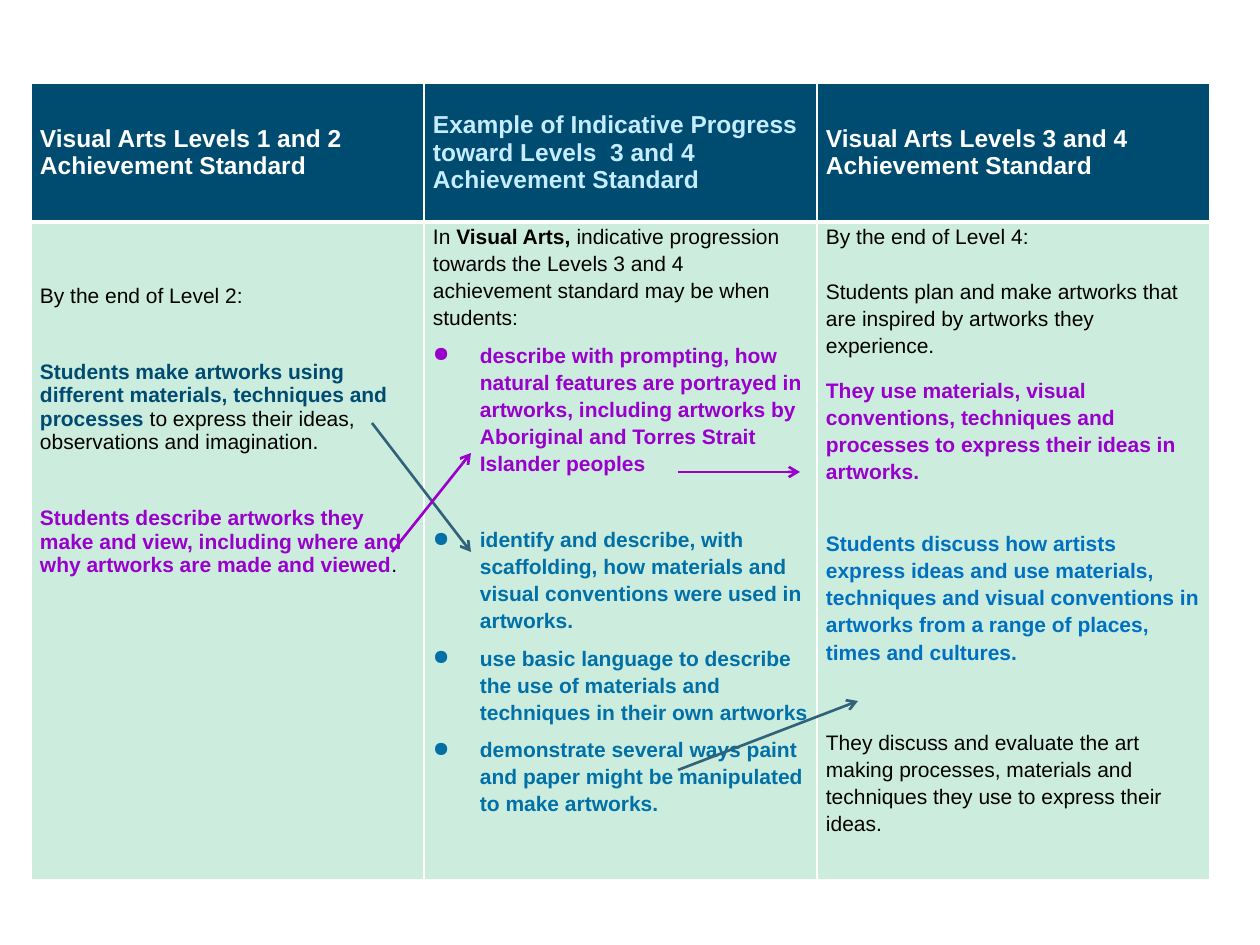
from lxml import etree
from pptx import Presentation
from pptx.dml.color import RGBColor
from pptx.enum.shapes import MSO_CONNECTOR
from pptx.enum.text import MSO_ANCHOR
from pptx.oxml.ns import qn
from pptx.util import Pt

STRAIGHT = MSO_CONNECTOR.STRAIGHT
TOP, MIDDLE = MSO_ANCHOR.TOP, MSO_ANCHOR.MIDDLE
EMU_PER_INCH, PX_PER_INCH = 914400, 126
BLANK_LAYOUT = 6
COLORS = {
    "white": "FFFFFF", "black": "000000", "navy": "004B70", "ice": "C6ECFF",
    "mint": "CCECDE", "purple": "9900CC", "teal": "0070A7", "blue": "0070C0",
    "slate": "306278",
}


def px(length):
    return round(length * EMU_PER_INCH / PX_PER_INCH)


def rgb(name):
    return RGBColor.from_string(COLORS[name])


class SlideBuilder:
    """Holds the text style and the current slide."""

    font_name = "Arial"
    cell_margin = 9
    bullet_indent = 47

    def __init__(self, slide):
        self.slide = slide

    def table(self, left, top, widths, heights):
        frame = self.slide.shapes.add_table(
            len(heights), len(widths), px(left), px(top), px(sum(widths)), px(sum(heights)))
        for column, width in zip(frame.table.columns, widths):
            column.width = px(width)
        for row, height in zip(frame.table.rows, heights):
            row.height = px(height)
        return frame.table

    def cell(self, cell, fill, anchor, top_margin=0, top_border=1, bottom_border=1):
        cell.margin_left = cell.margin_right = px(self.cell_margin)
        cell.margin_top, cell.margin_bottom = px(top_margin), 0
        cell.vertical_anchor = anchor
        properties = cell._tc.get_or_add_tcPr()
        borders = {"lnL": 1, "lnR": 1, "lnT": top_border, "lnB": bottom_border}
        for side, width in borders.items():
            border = etree.SubElement(properties, qn(f"a:{side}"), w=str(Pt(width)))
            solid = etree.SubElement(border, qn("a:solidFill"))
            etree.SubElement(solid, qn("a:srgbClr"), val=COLORS["white"])
        cell.fill.solid()
        cell.fill.fore_color.rgb = rgb(fill)

    def paragraph(self, para, spans, size, before=0, after=0, spacing=1.0, bullet=False):
        """Each span is (text, colour, bold)."""
        para.line_spacing = spacing
        para.space_before, para.space_after = Pt(before), Pt(after)
        if bullet:
            properties = para._p.get_or_add_pPr()
            properties.set("marL", str(px(self.bullet_indent)))
            properties.set("indent", str(-px(self.bullet_indent)))
            etree.SubElement(properties, qn("a:buChar"), char="●")
        para.font.name, para.font.size = self.font_name, Pt(size)
        for text, color, bold in spans:
            span = para.add_run()
            span.text = text
            font = para.font if len(spans) == 1 else span.font
            font.bold, font.color.rgb = bold, rgb(color)

    def text(self, cell, paragraphs, size, spacing=1.0):
        """Each paragraph is (spans, space before, space after, bullet)."""
        frame = cell.text_frame
        frame.word_wrap = True
        for index, (spans, before, after, bullet) in enumerate(paragraphs):
            para = frame.add_paragraph() if index else frame.paragraphs[0]
            self.paragraph(para, spans, size, before, after, spacing, bullet)

    def arrow(self, start, end, color):
        line = self.slide.shapes.add_connector(STRAIGHT, *map(px, start + end))
        line.line.color.rgb = rgb(color)
        line.line.width = Pt(1.5)
        etree.SubElement(line.line._get_or_add_ln(), qn("a:tailEnd"), type="arrow")
        etree.SubElement(line._element.spPr, qn("a:effectLst"))


HEADERS = [
    ("Visual Arts Levels 1 and 2 Achievement Standard", "white"),
    ("Example of Indicative Progress toward Levels  3 and 4 Achievement Standard", "ice"),
    ("Visual Arts Levels 3 and 4 Achievement Standard", "white"),
]

LEVEL_2 = [
    ([("By the end of Level 2:", "black", False)], 0, 0, False),
    ([("Students make artworks using different materials, techniques and processes ",
       "navy", True),
      ("to express their ideas, observations and imagination.", "black", False)],
     30, 0, False),
    ([("Students describe artworks they make and view, including where and why "
       "artworks are made and viewed", "purple", True),
      (".", "black", False)], 30, 0, False),
]

PROGRESS = [
    ([("In", "black", False), (" Visual Arts, ", "black", True),
      ("indicative progression towards the Levels 3 and 4 achievement standard may be "
       "when students:", "black", False)], 0, 6, False),
    ([("describe with prompting, how natural features are portrayed in artworks, "
       "including artworks by Aboriginal and Torres Strait Islander peoples",
       "purple", True)], 0, 6, True),
    ([("identify and describe, with scaffolding, how materials and visual conventions "
       "were used in artworks.", "teal", True)], 22, 6, True),
    ([("use basic language to describe the use of materials and techniques in their own "
       "artworks", "teal", True)], 0, 6, True),
    ([("demonstrate several ways paint and paper might be manipulated to make artworks.",
       "teal", True)], 0, 6, True),
]

LEVEL_4 = [
    ([("By the end of Level 4:", "black", False)], 0, 0, False),
    ([("Students plan and make artworks that are inspired by artworks they experience.",
       "black", False)], 16, 10, False),
    ([("They use materials, visual conventions, techniques and processes to express "
       "their ideas in artworks.", "purple", True)], 0, 0, False),
    ([("Students discuss how artists express ideas and use materials, techniques and "
       "visual conventions in artworks from a range of places, times and cultures.",
       "blue", True)], 26, 10, False),
    ([("They discuss and evaluate the art making processes, materials and techniques "
       "they use to express their ideas.", "black", False)], 26, 0, False),
]

# Text, top margin and line spacing of each body cell
BODY = [(LEVEL_2, 62, 1.0), (PROGRESS, 0, 1.15), (LEVEL_4, 0, 1.15)]

ARROWS = [
    ((372, 423), (471, 552), "slate"),
    ((678, 770), (858, 701), "slate"),
    ((392, 552), (471, 453), "purple"),
    ((678, 472), (800, 472), "purple"),
]


def main():
    deck = Presentation()
    deck.slide_width, deck.slide_height = px(1260), px(945)
    builder = SlideBuilder(deck.slides.add_slide(deck.slide_layouts[BLANK_LAYOUT]))

    # Achievement standards table
    table = builder.table(31, 83, [393, 393, 393], [139, 658])
    for column, (text, color) in enumerate(HEADERS):
        cell = table.cell(0, column)
        builder.cell(cell, "navy", MIDDLE, bottom_border=3)
        builder.text(cell, [([(text, color, True)], 0, 0, False)], 14)
    for column, (paragraphs, top_margin, spacing) in enumerate(BODY):
        cell = table.cell(1, column)
        builder.cell(cell, "mint", TOP, top_margin, top_border=3)
        builder.text(cell, paragraphs, 12, spacing)

    # Arrows from each standard to its progression
    for start, end, color in ARROWS:
        builder.arrow(start, end, color)

    deck.save("out.pptx")


if __name__ == "__main__":
    main()
